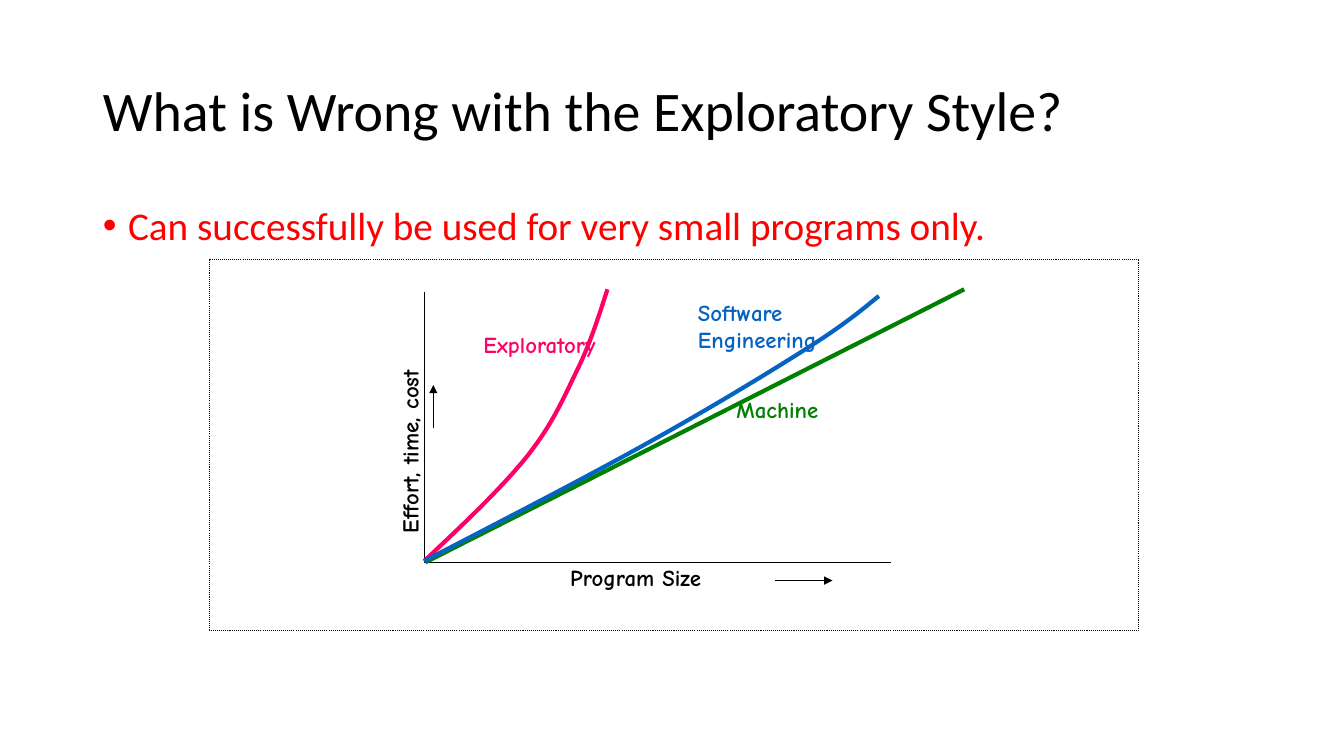
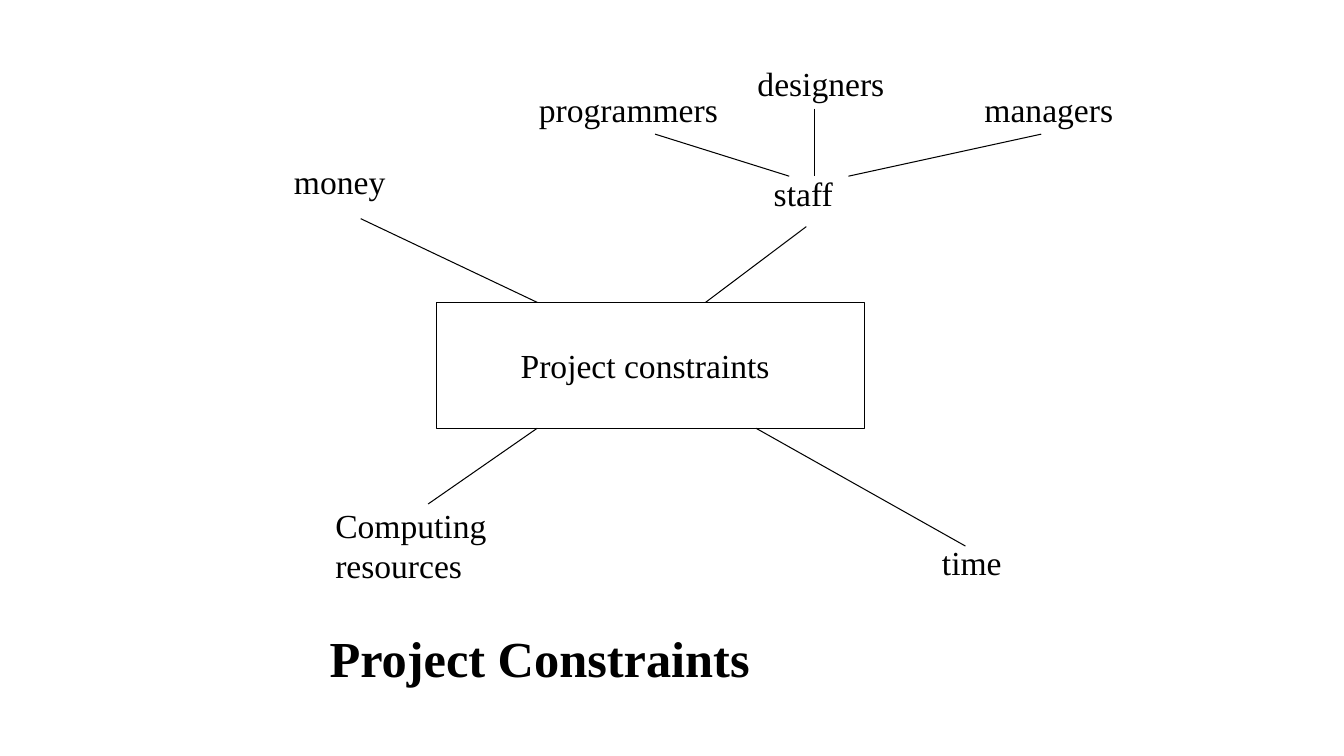
from lxml import etree
from pptx import Presentation
from pptx.dml.color import RGBColor
from pptx.enum.dml import MSO_LINE
from pptx.enum.shapes import MSO_CONNECTOR, MSO_SHAPE
from pptx.enum.text import MSO_ANCHOR, MSO_AUTO_SIZE, PP_ALIGN
from pptx.oxml.ns import qn
from pptx.util import Cm, Pt

STRAIGHT = MSO_CONNECTOR.STRAIGHT
RECTANGLE = MSO_SHAPE.RECTANGLE
DOTTED = MSO_LINE.ROUND_DOT
TOP, MIDDLE = MSO_ANCHOR.TOP, MSO_ANCHOR.MIDDLE
LEFT, CENTER = PP_ALIGN.LEFT, PP_ALIGN.CENTER
NO_FIT, GROW = MSO_AUTO_SIZE.NONE, MSO_AUTO_SIZE.SHAPE_TO_FIT_TEXT

TITLE_AND_CONTENT, TITLE_ONLY = 1, 5
BLACK, RED = "000000", "FF0000"
PINK, BLUE, GREEN = "FF0066", "0563C1", "008000"
SANS, COMIC, SERIF = "Calibri", "Comic Neue", "Times New Roman"
THIN, THICK = 0.75, 3
CURVE_STEPS = 12


def color(hex_string):
    return RGBColor.from_string(hex_string)


def set_text(shape, text, font, size, hex_color=BLACK, bold=False, align=LEFT):
    shape.text_frame.text = text
    for paragraph in shape.text_frame.paragraphs:
        paragraph.alignment = align
        for run in paragraph.runs:
            run.font.name = font
            run.font.size = Pt(size)
            run.font.bold = bold
            run.font.color.rgb = color(hex_color)


def place(shape, left, top, width, height):
    shape.left, shape.top = Cm(left), Cm(top)
    shape.width, shape.height = Cm(width), Cm(height)


def style_placeholder(placeholder, box, anchor, line_spacing, text, *style):
    place(placeholder, *box)
    set_text(placeholder, text, *style)
    frame = placeholder.text_frame
    frame.auto_size = NO_FIT
    frame.vertical_anchor = anchor
    for paragraph in frame.paragraphs:
        paragraph.line_spacing = line_spacing


def add_label(slide, box, text, *style):
    label = slide.shapes.add_textbox(*map(Cm, box))
    set_text(label, text, *style)
    label.text_frame.word_wrap = False
    label.text_frame.auto_size = GROW
    return label


def set_outline(shape, hex_color, width):
    shape.line.color.rgb = color(hex_color)
    shape.line.width = Pt(width)


def add_line(slide, start, end, hex_color=BLACK, width=THIN, arrow=False):
    line = slide.shapes.add_connector(STRAIGHT, *map(Cm, (*start, *end)))
    set_outline(line, hex_color, width)
    if arrow:
        etree.SubElement(line.line._get_or_add_ln(), qn("a:tailEnd"), type="triangle")
    etree.SubElement(line.element.spPr, qn("a:effectLst"))


def add_frame(slide, box):
    frame = slide.shapes.add_shape(RECTANGLE, *map(Cm, box))
    frame.fill.background()
    set_outline(frame, BLACK, THIN)
    frame.shadow.inherit = False
    return frame


def bezier_points(points):
    """Sample a chain of cubic curves: one start, then three points each."""
    sampled = [points[0]]
    for first in range(0, len(points) - 1, 3):
        controls = points[first:first + 4]
        for step in range(1, CURVE_STEPS + 1):
            t = step / CURVE_STEPS
            weights = ((1 - t) ** 3, 3 * t * (1 - t) ** 2, 3 * t * t * (1 - t), t ** 3)
            sampled.append(tuple(
                sum(weight * control[axis] for weight, control in zip(weights, controls))
                for axis in (0, 1)))
    return sampled


def add_curve(slide, points, hex_color):
    vertices = [(Cm(x), Cm(y)) for x, y in bezier_points(points)]
    builder = slide.shapes.build_freeform(*vertices[0], scale=1.0)
    builder.add_line_segments(vertices[1:], close=False)
    curve = builder.convert_to_shape()
    curve.fill.background()
    set_outline(curve, hex_color, THICK)
    curve.shadow.inherit = False


def add_effort_plot(slide, left, top, width, height):
    frame = add_frame(slide, (left, top, width, height))
    frame.line.dash_style = DOTTED

    def at(right, up):
        """Slide position of a point measured from the origin of the axes."""
        return left + 5.41 + right, top + 7.64 - up

    add_line(slide, at(0, 6.81), at(0, 0))
    add_line(slide, at(0, 0), at(11.76, 0))
    add_line(slide, at(0.03, 0), at(13.61, 6.88), GREEN, THICK)
    curves = (
        (PINK, ((0, 0.03), (0.97, 0.94), (1.93, 1.85), (2.57, 2.64), (3.2, 3.43),
                (3.48, 4.06), (3.81, 4.75), (4.17, 5.46), (4.39, 6.17), (4.62, 6.88))),
        (BLUE, ((0, 0.03), (1.9, 1.02), (3.84, 2.01), (5.44, 2.9), (7.04, 3.78),
                (8.64, 4.75), (9.63, 5.38), (10.64, 6.02), (11.05, 6.38), (11.46, 6.71))),
    )
    for hex_color, points in curves:
        add_curve(slide, [at(*point) for point in points], hex_color)

    add_line(slide, at(0.23, 3.38), at(0.23, 4.47), arrow=True)
    add_line(slide, at(8.84, -0.46), at(10.29, -0.46), arrow=True)

    labels = (
        ("Program Size", BLACK, (3.43, 0.1), (4.24, 0.97)),
        ("Exploratory", PINK, (1.24, 5.97), (3.78, 0.97)),
        ("Software\nEngineering", BLUE, (6.65, 6.78), (3.66, 1.65)),
        ("Machine", GREEN, (7.62, 4.32), (2.77, 0.97)),
    )
    for text, hex_color, position, size in labels:
        add_label(slide, (*at(*position), *size), text, COMIC, 16.3, hex_color, True)

    effort = add_label(slide, (*at(-0.84, 5.74), 1.9, 5.26),
                       "Effort, time, cost", COMIC, 16.3, BLACK, True)
    effort.text_frame.auto_size = NO_FIT
    effort.text_frame.word_wrap = True
    effort.text_frame._txBody.bodyPr.set("vert", "vert270")


def add_constraint_map(slide, left, top):
    def at(x, y):
        return left + x, top + y

    center = add_frame(slide, (*at(3.84, 6.15), 10.8, 3.18))
    set_text(center, "Project constraints", SERIF, 24, align=CENTER)
    center.text_frame.vertical_anchor = MIDDLE
    center.text_frame.margin_right = Cm(0.53)

    labels = (
        ("money", (0, 2.46), (2.82, 1.27)),
        ("time", (16.33, 12.07), (2.01, 1.27)),
        ("Computing\nresources", (1.04, 11.13), (4.57, 2.31)),
        ("staff", (12.09, 2.77), (2.01, 1.27)),
        ("programmers", (6.17, 0.64), (5.03, 1.27)),
        ("managers", (17.4, 0.64), (3.76, 1.27)),
        ("designers", (11.68, 0), (3.71, 1.27)),
    )
    for text, position, size in labels:
        add_label(slide, (*at(*position), *size), text, SERIF, 24)

    branches = (
        ((1.93, 4.04), (6.38, 6.15)),
        ((6.38, 9.32), (3.63, 11.23)),
        ((11.89, 9.32), (17.17, 12.29)),
        ((13.16, 4.24), (10.62, 6.15)),
        ((9.35, 1.91), (12.73, 2.97)),
        ((13.36, 1.27), (13.36, 2.97)),
        ((19.08, 1.91), (14.22, 2.97)),
    )
    for start, end in branches:
        add_line(slide, at(*start), at(*end))


def build_exploratory_slide(presentation):
    slide = presentation.slides.add_slide(presentation.slide_layouts[TITLE_AND_CONTENT])
    style_placeholder(slide.shapes.title, (2.34, 1.02, 29.21, 3.68), MIDDLE, 0.9,
                      "What is Wrong with the Exploratory Style?", SANS, 39.9)
    body = slide.placeholders[1]
    style_placeholder(body, (2.34, 5.08, 29.21, 12.09), TOP, 0.9,
                      "Can successfully be used for very small programs only.",
                      SANS, 28, RED)
    bullet = body.text_frame.paragraphs[0]
    bullet.space_before = Pt(10)
    properties = bullet._p.get_or_add_pPr()
    properties.set("marL", str(Pt(18)))
    properties.set("indent", str(Pt(-18)))
    add_effort_plot(slide, 5.28, 6.53, 23.42, 9.35)


def build_constraints_slide(presentation):
    slide = presentation.slides.add_slide(presentation.slide_layouts[TITLE_ONLY])
    style_placeholder(slide.shapes.title, (8.05, 15.67, 19.38, 1.8), TOP, 1.0,
                      "Project Constraints", SERIF, 36, BLACK, True)
    add_constraint_map(slide, 7.16, 1.47)


def main():
    presentation = Presentation()
    presentation.slide_width, presentation.slide_height = Cm(33.87), Cm(19.05)
    build_exploratory_slide(presentation)
    build_constraints_slide(presentation)
    presentation.save("out.pptx")


if __name__ == "__main__":
    main()
